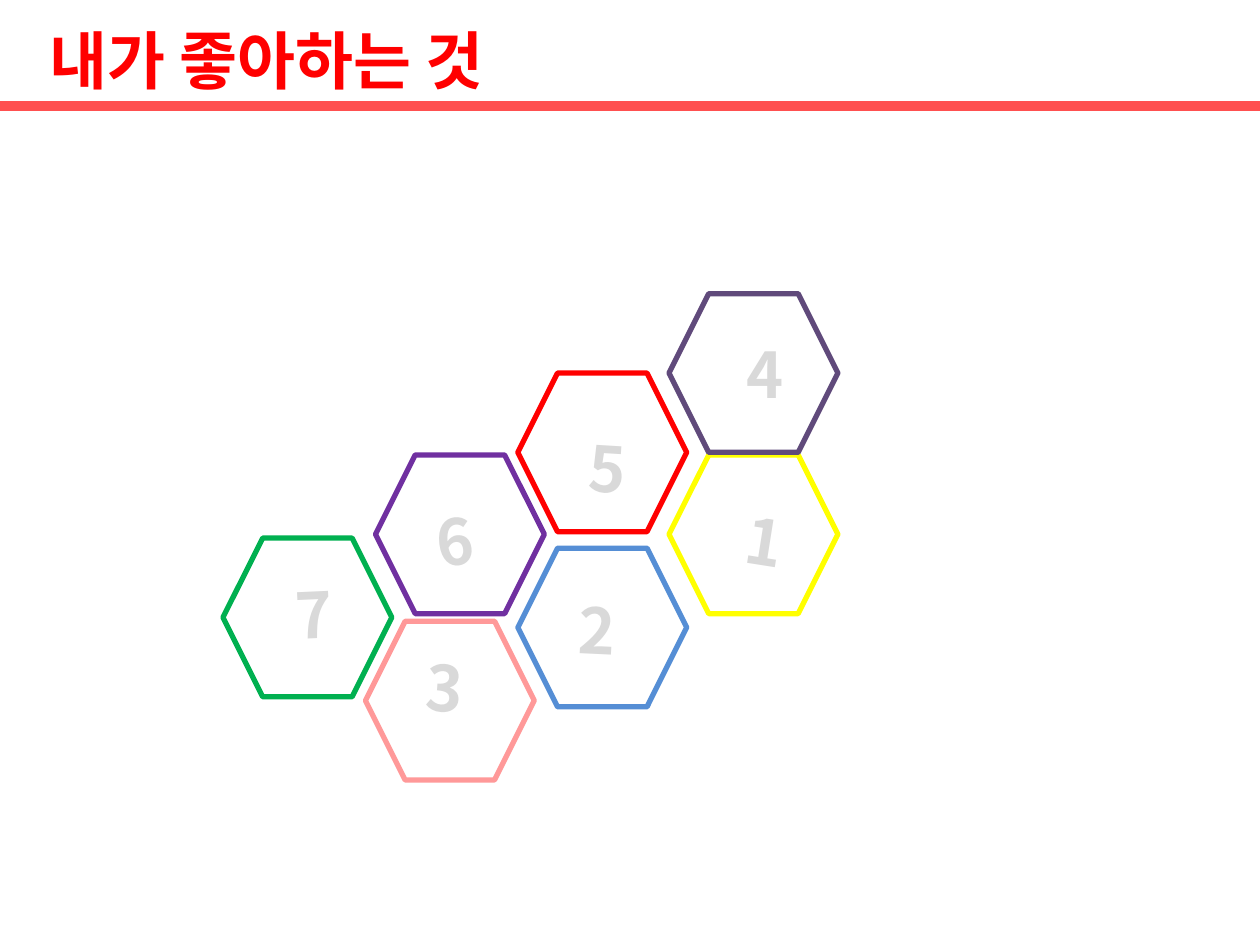
from lxml.etree import SubElement
from pptx import Presentation
from pptx.dml.color import RGBColor
from pptx.enum.shapes import MSO_CONNECTOR, MSO_SHAPE
from pptx.enum.text import MSO_ANCHOR, MSO_AUTO_SIZE, PP_ALIGN
from pptx.oxml.ns import qn
from pptx.util import Inches, Pt

COLORS = {
    "white": "FFFFFF", "number": "D9D9D9", "title": "FF0000", "rule": "FF5050",
    "yellow": "FFFF00", "plum": "604A7B", "red": "FF0000", "blue": "558ED5",
    "pink": "FF9999", "purple": "7030A0", "green": "00B050",
}
FONT = "Noto Sans CJK KR"
COLUMNS, ROWS = 100, 75
HEXAGON = (13.4, 12.6)

# colour, column and row of each cell's left top corner
CELLS = [
    ("yellow", 53.1, 36.1), ("plum", 53.1, 23.3), ("red", 41.1, 29.6),
    ("blue", 41.1, 43.5), ("pink", 29, 49.3), ("purple", 29.8, 36.1),
    ("green", 17.7, 42.7),
]
# column, row, height and tilt of the numbers 1 to 7
NUMBERS = [
    (57.7, 40.4, 5, 9), (44.4, 47, 5.8, 2.8), (32.3, 52, 5, 4.1),
    (57.7, 27.1, 5, 0), (45.2, 34.6, 5, 3.6), (33.1, 40.4, 5, -7.1),
    (21.9, 46.2, 5, -2.6),
]


def rgb(name):
    return RGBColor.from_string(COLORS[name])


class Board:
    def __init__(self, deck):
        self.slide = deck.slides.add_slide(deck.slide_layouts[6])
        self.column = deck.slide_width / COLUMNS
        self.row = deck.slide_height / ROWS
        self.honeycomb = self.slide.shapes.add_group_shape()

    def grid(self, column, row, width, height):
        return [round(size * unit) for size, unit in zip(
            (column, row, width, height), (self.column, self.row) * 2)]

    def letter(self, holder, words, color, align, insets):
        """Put one bold line of words into the holder."""
        frame = holder.text_frame
        frame.word_wrap = True
        frame.vertical_anchor = MSO_ANCHOR.MIDDLE
        for side, inset in insets.items():
            setattr(frame, f"margin_{side}", Inches(inset))
        paragraph = frame.paragraphs[0]
        paragraph.alignment = align
        run = paragraph.add_run()
        run.text = words
        for name, value in {"name": FONT, "size": Pt(36), "bold": True}.items():
            setattr(run.font, name, value)
        run.font.color.rgb = rgb(color)
        SubElement(run.font._element, qn("a:ea"), typeface=FONT)

    def block(self, preset, place, tilt):
        block = self.honeycomb.shapes.add_shape(preset, *self.grid(*place))
        block.shadow.inherit = False
        block.rotation = tilt
        return block

    def hexagon(self, color, column, row):
        cell = self.block(MSO_SHAPE.HEXAGON, (column, row, *HEXAGON), 180)
        cell.fill.background()
        cell.line.color.rgb = rgb(color)
        cell.line.width = Pt(3)

    def number(self, value, column, row, height, tilt):
        label = self.block(MSO_SHAPE.RECTANGLE, (column, row, 6, height), tilt)
        label.fill.solid()
        label.fill.fore_color.rgb = rgb("white")
        label.line.fill.background()
        self.letter(label, str(value), "number", PP_ALIGN.CENTER,
                    {"left": 0.1, "right": 0.1, "top": 0.05, "bottom": 0.05})

    def title(self, words):
        heading = self.slide.shapes.add_textbox(*self.grid(0, -0.5, COLUMNS, 10.4))
        self.letter(heading, words, "title", PP_ALIGN.LEFT,
                    {"left": 0.39, "right": 0.39, "top": 0.2, "bottom": 0.2})
        heading.text_frame.auto_size = MSO_AUTO_SIZE.SHAPE_TO_FIT_TEXT

    def rule(self, row):
        rule = self.slide.shapes.add_connector(
            MSO_CONNECTOR.STRAIGHT, *self.grid(0, row, COLUMNS, row))
        rule.line.color.rgb = rgb("rule")
        rule.line.width = Pt(6)
        SubElement(rule._element.spPr, qn("a:effectLst"))


def main():
    deck = Presentation()
    deck.slide_width, deck.slide_height = Inches(10), Inches(7.5)
    board = Board(deck)
    for cell in CELLS:
        board.hexagon(*cell)
    for value, place in enumerate(NUMBERS, start=1):
        board.number(value, *place)
    board.title("내가 좋아하는 것")
    board.rule(8.4)
    deck.save("out.pptx")


if __name__ == "__main__":
    main()
